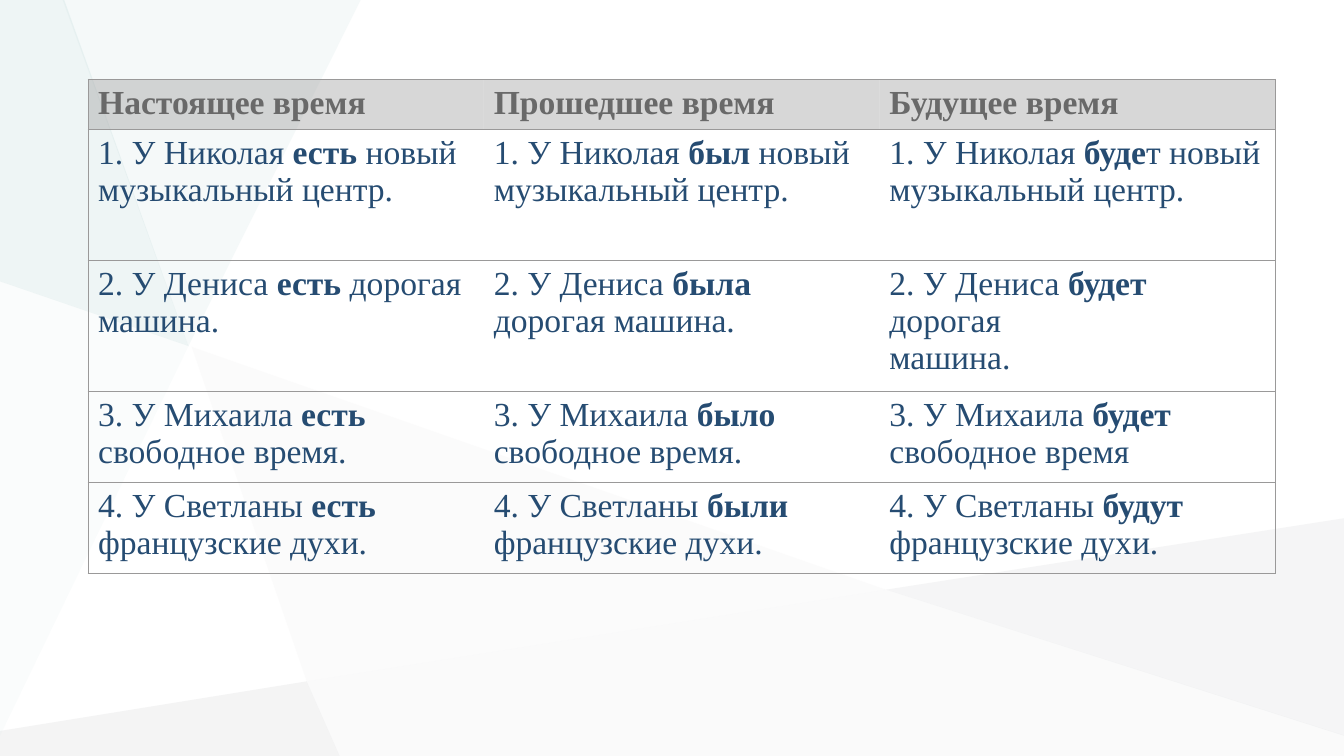
from dataclasses import dataclass

from lxml import etree
from pptx import Presentation
from pptx import util as u
from pptx.dml.color import RGBColor
from pptx.oxml import parse_xml
from pptx.oxml.ns import nsdecls, qn


@dataclass(frozen=True)
class Theme:
    font: str = "Times New Roman"
    size: int = 24
    heading: str = "696969"
    body: str = "264C72"
    header_fill: str = "9D9C9C"
    header_opacity: int = 40
    rule: str = "9A9999"
    rule_width: float = 0.75
    plain_table: str = "{2D5ABB26-0587-4C30-8999-92F81FD0307C}"


class TenseSlide:
    def __init__(self, deck, theme):
        self.theme = theme
        self.page = deck.slides.add_slide(deck.slide_layouts[6])

    def tint(self, fill, element, color, opacity):
        fill.solid()
        fill.fore_color.rgb = RGBColor.from_string(color)
        color_node = next(element.iter(qn("a:srgbClr")))
        alpha = etree.SubElement(color_node, qn("a:alpha"))
        alpha.set("val", str(opacity * 1000))

    def facet(self, points, color, opacity):
        corners = [(u.Cm(x), u.Cm(y)) for x, y in points]
        builder = self.page.shapes.build_freeform(*corners[0])
        builder.add_line_segments(corners[1:], close=True)
        shape = builder.convert_to_shape()
        shape.shadow.inherit = False
        shape.line.fill.background()
        self.tint(shape.fill, shape.element, color, opacity)

    def put_text(self, frame, content, color, heading):
        """Lines become paragraphs; words between asterisks are bold."""
        for number, line in enumerate(content.split("\n")):
            para = frame.add_paragraph() if number else frame.paragraphs[0]
            for index, piece in enumerate(line.split("*")):
                if not piece:
                    continue
                span = para.add_run()
                span.text = piece
                formats = {"name": self.theme.font, "size": u.Pt(self.theme.size),
                           "bold": heading or index % 2 == 1}
                for key, value in formats.items():
                    setattr(span.font, key, value)
                span.font.color.rgb = RGBColor.from_string(color)

    def rule(self, cell, sides):
        properties = cell._tc.get_or_add_tcPr()
        width = u.Pt(self.theme.rule_width)
        for position, side in enumerate(sides):
            properties.insert(position, parse_xml(
                f'<a:ln{side} {nsdecls("a")} w="{width}"><a:solidFill>'
                f'<a:srgbClr val="{self.theme.rule}"/></a:solidFill></a:ln{side}>'))

    def table(self, rows, left, top, column_width, row_heights):
        theme = self.theme
        columns = len(rows[0])
        frame = self.page.shapes.add_table(
            len(rows), columns, u.Cm(left), u.Cm(top),
            u.Cm(column_width * columns), u.Cm(sum(row_heights)))
        table = frame.table
        table.horz_banding = False
        next(table._tbl.iter(qn("a:tableStyleId"))).text = theme.plain_table
        for column in table.columns:
            column.width = u.Cm(column_width)
        for r, (contents, height) in enumerate(zip(rows, row_heights)):
            table.rows[r].height = u.Cm(height)
            heading = r == 0
            color = theme.heading if heading else theme.body
            for c, content in enumerate(contents):
                cell = table.cell(r, c)
                self.put_text(cell.text_frame, content, color, heading)
                if heading:
                    self.tint(cell.fill, cell._tc.get_or_add_tcPr(),
                              theme.header_fill, theme.header_opacity)
                else:
                    cell.fill.background()
                outer = {0: "L", columns - 1: "R"}.get(c, "")
                self.rule(cell, outer + "TB")


# Background facets: corners in centimetres, colour, opacity in percent
WIDTH, HEIGHT = 33.87, 19.05
HUB, LOW, RIGHT = (4.75, 8.72), (7.73, 17.17), (22.33, 14.86)
FACETS = [
    ([(4.83, 8.74), LOW, RIGHT], "F3F2F2", 26),
    ([LOW, (0, 18.42), (0, HEIGHT), (8.56, HEIGHT)], "B6B8BA", 15),
    ([(9.09, 0), (1.58, 0), HUB], "E0EDED", 31),
    ([(WIDTH, 13.06), RIGHT, (WIDTH, 18.54)], "C6C8CA", 17),
    ([RIGHT, LOW, (8.56, HEIGHT), (WIDTH, HEIGHT), (WIDTH, 18.53)], "B6B8BA", 6),
    ([(1.62, 0), (0, 0), (0, 7.09), HUB], "C1DBDB", 27),
    ([(0, 7.09), (0, 18.54), HUB], "C1DBDB", 8),
]

# Table contents
ROWS = [
    ["Настоящее время", "Прошедшее время", "Будущее время"],
    ["1. У Николая *есть* новый\nмузыкальный центр.",
     "1. У Николая *был *новый\nмузыкальный центр.",
     "1. У Николая *буде*т новый\nмузыкальный центр."],
    ["2. У Дениса *есть* дорогая машина.",
     "2. У Дениса *была* дорогая машина.",
     "2. У Дениса *будет* дорогая\nмашина."],
    ["3. У Михаила *есть*\nсвободное время.",
     "3. У Михаила *было* свободное время.",
     "3. У Михаила *будет*\nсвободное время"],
    ["4. У Светланы *есть*\nфранцузские духи.",
     "4. У Светланы *были*\nфранцузские духи.",
     "4. У Светланы *будут*\nфранцузские духи."],
]


def main():
    deck = Presentation()
    deck.slide_width, deck.slide_height = u.Cm(WIDTH), u.Cm(HEIGHT)
    slide = TenseSlide(deck, Theme())
    for points, color, opacity in FACETS:
        slide.facet(points, color, opacity)
    slide.table(ROWS, left=2.22, top=2, column_width=9.97,
                row_heights=[1.27, 3.3, 3.3, 2.29, 2.29])
    deck.save("out.pptx")


if __name__ == "__main__":
    main()
